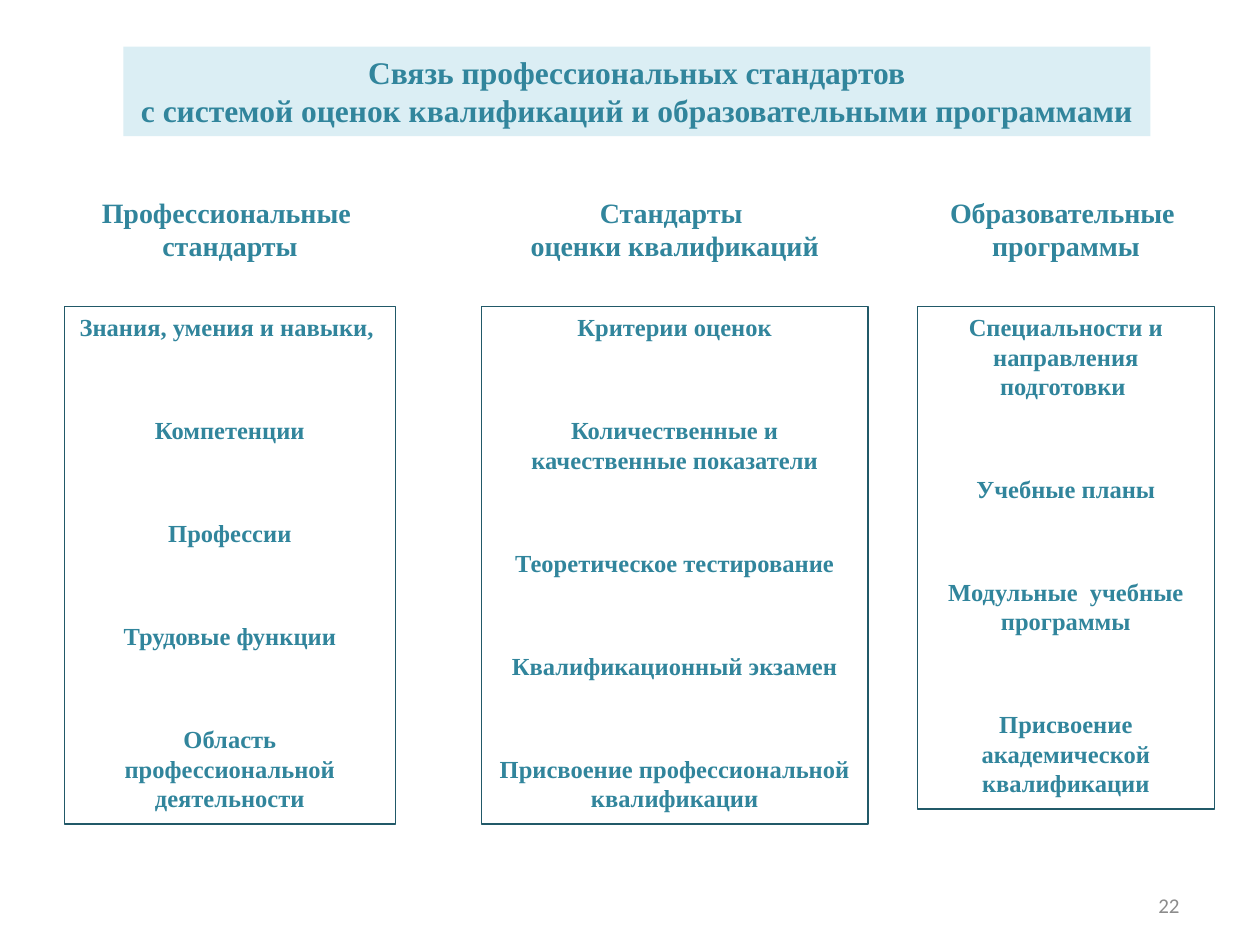
from pptx import Presentation
from pptx import util as u
from pptx.dml.color import RGBColor
from pptx.enum import shapes, text

COLORS = {"teal": "31859C", "pale": "DBEEF4", "border": "215968", "gray": "8C8C8C"}


class SlideBuilder:
    """Holds the text style and the slide being built."""

    font = "Times New Roman"

    def __init__(self, page):
        self.page = page

    def set_lines(self, box, lines, size, wrap=False, gap=0):
        frame = box.text_frame
        frame.word_wrap = wrap
        frame.vertical_anchor = text.MSO_ANCHOR.TOP
        frame.text = "\n".join(lines)
        for index, para in enumerate(frame.paragraphs):
            para.alignment = text.PP_ALIGN.CENTER
            para.space_before = u.Pt(gap if index else 0)
            for span in para.runs:
                self.style(span, size)

    def style(self, span, size, color="teal", bold=True, font=None):
        span.font.name = font or self.font
        span.font.size = u.Pt(size)
        span.font.bold = bold
        span.font.color.rgb = RGBColor.from_string(COLORS[color])

    def rectangle(self, left, top, width, height, fill=None, line=None):
        box = self.page.shapes.add_shape(
            shapes.MSO_SHAPE.RECTANGLE, *map(u.Inches, (left, top, width, height)))
        box.shadow.inherit = False
        if fill:
            box.fill.solid()
            box.fill.fore_color.rgb = RGBColor.from_string(COLORS[fill])
        else:
            box.fill.background()
        if line:
            box.line.color.rgb = RGBColor.from_string(COLORS[line])
            box.line.width = u.Pt(0.75)
        else:
            box.line.fill.background()
        return box

    def label(self, left, top, width, height):
        return self.page.shapes.add_textbox(*map(u.Inches, (left, top, width, height)))

    def title(self, lines):
        self.set_lines(self.rectangle(0.98, 0.37, 8.15, 0.71, fill="pale"), lines, 18)

    def column(self, left, width, height, heading, items):
        self.set_lines(self.label(left, 1.5, width, 0.64), heading, 16)
        box = self.rectangle(left, 2.43, width, height, line="border")
        self.set_lines(box, items, 14, wrap=True, gap=42)

    def page_number(self, number):
        box = self.label(7.13, 6.98, 2.33, 0.4)
        box.text_frame.text = number
        box.text_frame.word_wrap = True
        box.text_frame.vertical_anchor = text.MSO_ANCHOR.MIDDLE
        para = box.text_frame.paragraphs[0]
        para.alignment = text.PP_ALIGN.RIGHT
        self.style(para.runs[0], 12, "gray", bold=False, font="Calibri")


# Each column: left, width, box height, heading lines, items
COLUMNS = [
    (0.51, 2.63, 4.11, ["Профессиональные ", "стандарты"],
     ["Знания, умения и навыки, ", "Компетенции", "Профессии", "Трудовые функции",
      "Область профессиональной деятельности"]),
    (3.82, 3.07, 4.11, ["Стандарты ", "оценки квалификаций"],
     ["Критерии оценок", "Количественные и качественные показатели",
      "Теоретическое тестирование", "Квалификационный экзамен",
      "Присвоение профессиональной квалификации"]),
    (7.28, 2.36, 3.99, ["Образовательные ", "программы"],
     ["Специальности и направления подготовки ", "Учебные планы",
      "Модульные  учебные программы", "Присвоение академической квалификации"]),
]


def main():
    deck = Presentation()
    deck.slide_width, deck.slide_height = u.Inches(10), u.Inches(7.5)
    builder = SlideBuilder(deck.slides.add_slide(deck.slide_layouts[6]))

    # Title band
    builder.title([" Связь профессиональных стандартов ",
                   "с системой оценок квалификаций и образовательными программами"])

    # Three columns
    for column in COLUMNS:
        builder.column(*column)

    # Page number
    builder.page_number("22")
    deck.save("out.pptx")


if __name__ == "__main__":
    main()
